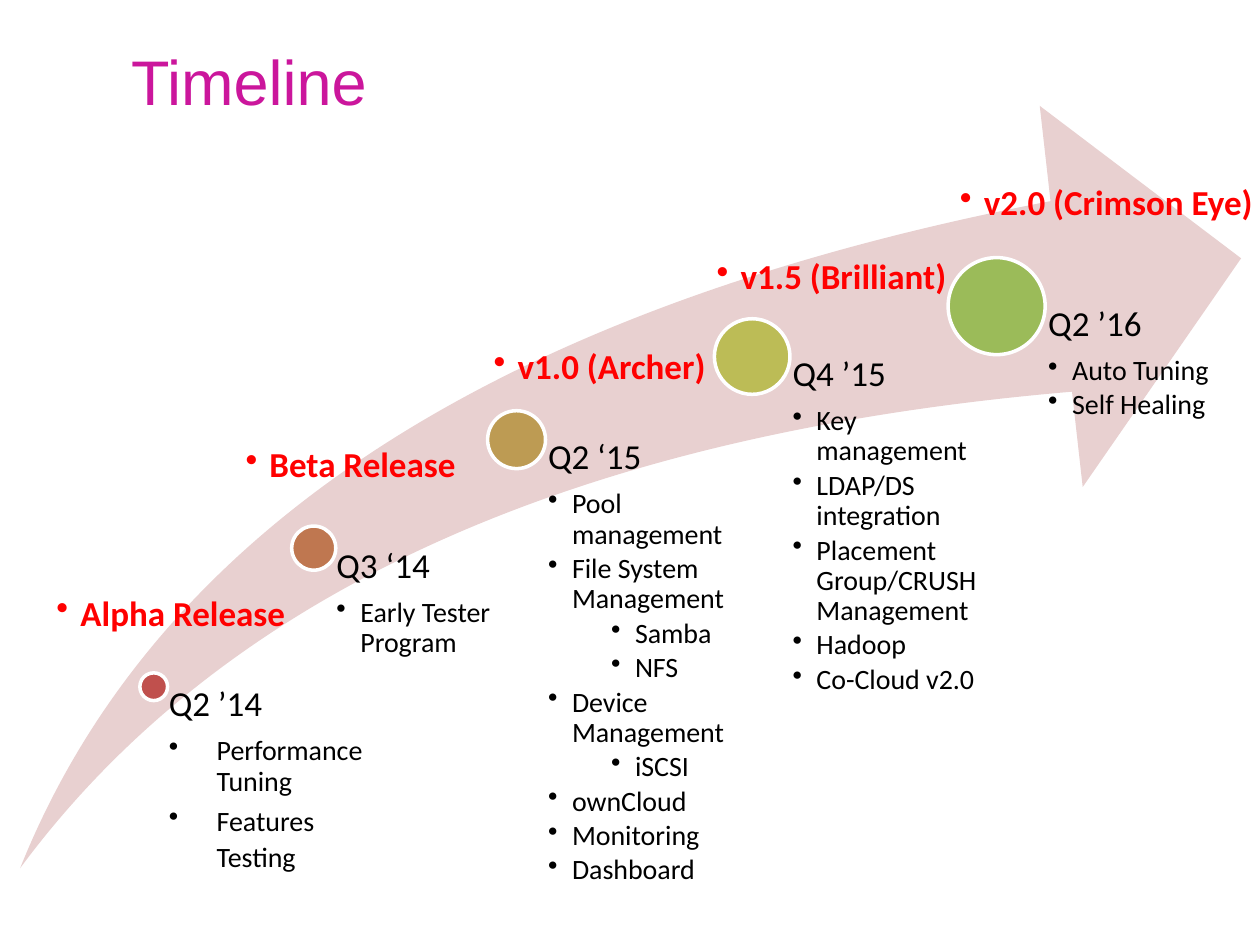
from dataclasses import dataclass

from lxml import etree
from pptx import Presentation
from pptx.dml.color import RGBColor
from pptx.enum.shapes import MSO_SHAPE
from pptx.enum.text import MSO_ANCHOR, PP_ALIGN
from pptx.oxml.ns import qn
from pptx.util import Inches, Pt

ELLIPSE = MSO_SHAPE.OVAL
SWOOSH = MSO_SHAPE.SWOOSH_ARROW
LEFT = PP_ALIGN.LEFT
MIDDLE = MSO_ANCHOR.MIDDLE
TOP = MSO_ANCHOR.TOP

SLIDE_WIDTH, SLIDE_HEIGHT = Inches(10), Inches(7.5)
COLUMNS, ROWS = 100, 75
COLUMN, ROW = SLIDE_WIDTH / COLUMNS, SLIDE_HEIGHT / ROWS
ARROW_LEFT, ARROW_TOP, ARROW_WIDTH, ARROW_BOTTOM = 1.6, 8.4, 96.9, 68.9
HEADING_SIZE, ITEM_SIZE = 20, 16
HEADING_GAP, ITEM_GAP = 7, 2.4
HANG = 0.19


@dataclass(frozen=True)
class Item:
    text: str
    indent: float = HANG
    hang: float = HANG
    gap: float = ITEM_GAP
    tail_size: int = 0


@dataclass(frozen=True)
class Milestone:
    quarter: str
    center_column: float
    center_row: float
    diameter: float
    color: str
    width: float
    inset: float
    items: tuple[Item, ...]


@dataclass(frozen=True)
class Release:
    name: str
    column: float
    row: float
    width: float


def wide_item(text: str, tail_size: int = 0) -> Item:
    return Item(text, 0.38, 0.38, 5.6, tail_size)


def sub_item(text: str) -> Item:
    return Item(text, indent=0.69)


MILESTONES = (
    Milestone("Q2 ’14", 12.2, 54.5, 2.2, "C0504D", 17.3, 0.12, (
        wide_item("Performance Tuning"),
        wide_item("Features Testing", HEADING_SIZE))),
    Milestone("Q3 ‘14", 24.9, 43.5, 3.5, "BF7750", 16.1, 0.18, (
        Item("Early Tester Program"),)),
    Milestone("Q2 ‘15", 41, 34.9, 4.6, "BD9B53", 18.7, 0.25, (
        Item("Pool management"), Item("File System Management"),
        sub_item("Samba"), sub_item("NFS"),
        Item("Device Management"), sub_item("iSCSI"),
        Item("ownCloud"), Item("Monitoring"), Item("Dashboard"))),
    Milestone("Q4 ’15", 59.7, 28.3, 6, "BCBC56", 19.4, 0.32, (
        Item("Key management"), Item("LDAP/DS integration"),
        Item("Placement Group/CRUSH Management"),
        Item("Hadoop"), Item("Co-Cloud v2.0"))),
    Milestone("Q2 ’16", 79.1, 24.3, 7.7, "9BBB59", 19.4, 0.41, (
        Item("Auto Tuning"), Item("Self Healing"))),
)

RELEASES = (
    Release("Alpha Release", 3.5, 46.8, 20.3),
    Release("Beta Release", 18.5, 35, 18.8),
    Release("v1.0 (Archer)", 38.2, 27.2, 19),
    Release("v1.5 (Brilliant)", 55.9, 20.1, 20.4),
    Release("v2.0 (Crimson Eye)", 75.2, 14.2, 25.5),
)


def hex_color(value: str) -> RGBColor:
    return RGBColor.from_string(value)


def grid_box(column: float, row: float, width: float, height: float) -> tuple[int, ...]:
    return (round(column * COLUMN), round(row * ROW),
            round(width * COLUMN), round(height * ROW))


def set_font(font, name: str, size: float, color: str, bold: bool = False) -> None:
    font.name, font.size, font.bold = name, Pt(size), bold
    font.color.rgb = hex_color(color)


def add_bullet(para, indent: float, hang: float) -> None:
    properties = para._p.get_or_add_pPr()
    properties.set("marL", str(Inches(indent)))
    properties.set("indent", str(-Inches(hang)))
    etree.SubElement(properties, qn("a:buChar"), char="•")


def space_para(para, gap: float) -> None:
    para.alignment = LEFT
    para.line_spacing = 0.9
    para.space_after = Pt(gap)


def add_filled_shape(page, kind, place: tuple[int, ...], color: str):
    shape = page.shapes.add_shape(kind, *place)
    shape.shadow.inherit = False
    shape.fill.solid()
    shape.fill.fore_color.rgb = hex_color(color)
    shape.line.fill.background()
    return shape


def add_milestone(page, stone: Milestone) -> None:
    radius = stone.diameter / 2
    dot = add_filled_shape(page, ELLIPSE, grid_box(
        stone.center_column - radius, stone.center_row - radius,
        stone.diameter, stone.diameter), stone.color)
    dot.line.color.rgb = hex_color("FFFFFF")
    dot.line.width = Pt(2)

    box = page.shapes.add_textbox(*grid_box(
        stone.center_column, stone.center_row,
        stone.width, ARROW_BOTTOM - stone.center_row))
    frame = box.text_frame
    frame.word_wrap = True
    frame.vertical_anchor = TOP
    frame.margin_left = Inches(stone.inset)
    frame.margin_top = frame.margin_right = frame.margin_bottom = 0
    heading = frame.paragraphs[0]
    heading.text = stone.quarter
    space_para(heading, HEADING_GAP)
    set_font(heading.font, "Calibri", HEADING_SIZE, "000000")
    for item in stone.items:
        para = frame.add_paragraph()
        para.text = item.text
        space_para(para, item.gap)
        add_bullet(para, item.indent, item.hang)
        set_font(para.font, "Calibri", ITEM_SIZE, "000000")
        if item.tail_size:
            span = para.add_run()
            span.text = " "
            span.font.size = Pt(item.tail_size)


def add_release(page, release: Release) -> None:
    box = page.shapes.add_textbox(
        *grid_box(release.column, release.row, release.width, 4))
    box.text_frame.word_wrap = False
    para = box.text_frame.paragraphs[0]
    para.text = release.name
    space_para(para, ITEM_GAP)
    add_bullet(para, HANG, HANG)
    set_font(para.font, "Calibri", HEADING_SIZE, "FF0000", bold=True)


def add_title(page) -> None:
    title = page.shapes.title
    title.left, title.top, title.width, title.height = grid_box(9.4, 3, 89.4, 6.7)
    title.text_frame.text = "Timeline"
    title.text_frame.vertical_anchor = MIDDLE
    para = title.text_frame.paragraphs[0]
    para.alignment = LEFT
    set_font(para.font, "Arial", 36, "CB169C")


def main() -> None:
    deck = Presentation()
    deck.slide_width, deck.slide_height = SLIDE_WIDTH, SLIDE_HEIGHT
    page = deck.slides.add_slide(deck.slide_layouts[5])
    add_title(page)
    arrow = add_filled_shape(page, SWOOSH, grid_box(
        ARROW_LEFT, ARROW_TOP, ARROW_WIDTH, ARROW_BOTTOM - ARROW_TOP), "E8D0D0")
    arrow.adjustments[0] = arrow.adjustments[1] = 0.25
    for stone in MILESTONES:
        add_milestone(page, stone)
    for release in RELEASES:
        add_release(page, release)
    deck.save("out.pptx")


if __name__ == "__main__":
    main()
